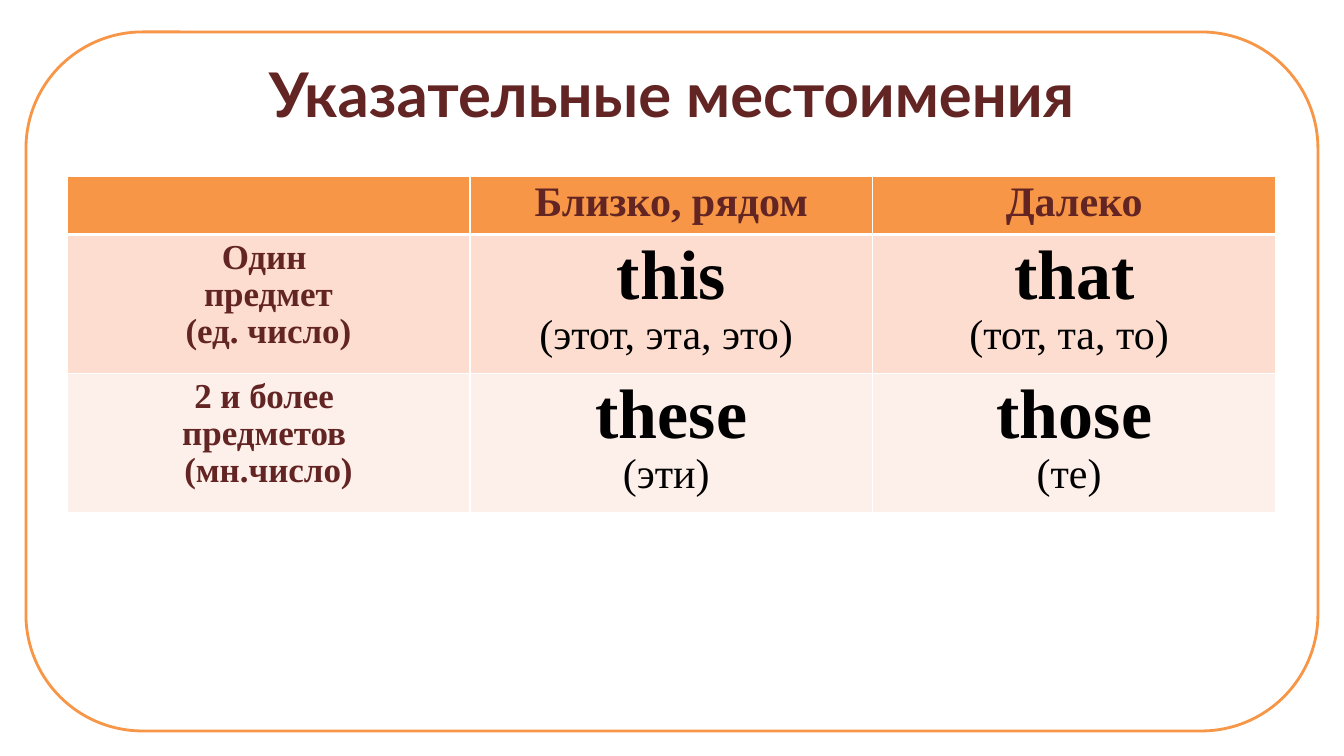
from pptx import Presentation
from pptx.dml.color import RGBColor
from pptx.enum.shapes import MSO_SHAPE
from pptx.enum.text import MSO_ANCHOR, PP_ALIGN
from pptx.oxml import parse_xml
from pptx.oxml.ns import nsdecls
from pptx.util import Emu, Pt

ORANGE, MAROON, BLACK, WHITE = "F79646", "632523", "000000", "FFFFFF"
TITLE = "Указательные местоимения"
SERIF = "Times New Roman"
FORMATS = {
    "title": {"name": "Lato", "size": Pt(44), "bold": True, "color": MAROON},
    "heading": {"name": SERIF, "size": Pt(30), "bold": True, "color": MAROON},
    "number": {"name": SERIF, "size": Pt(25), "bold": True, "color": MAROON},
    "pronoun": {"name": SERIF, "size": Pt(50), "bold": True, "color": BLACK},
    "meaning": {"name": SERIF, "size": Pt(30), "bold": False, "color": BLACK},
}
ROWS = [
    (56, ORANGE, [
        [],
        [("heading", "Близко, рядом")],
        [("heading", "Далеко")],
    ]),
    (134, "FCDDCF", [
        [("number", "Один "), ("number", "предмет"), ("number", "(ед. число)")],
        [("pronoun", "this"), ("meaning", "(этот, эта, это) ")],
        [("pronoun", "that"), ("meaning", "(тот, та, то) ")],
    ]),
    (134, "FDEFE9", [
        [("number", "2 и более "), ("number", "предметов "), ("number", "(мн.число)")],
        [("pronoun", "these"), ("meaning", "(эти) ")],
        [("pronoun", "those"), ("meaning", "(те) ")],
    ]),
]
SLIDE_SIZE = (1344, 756)
FRAME_BOX = (26, 32, 1292, 699)
TITLE_BOX = (67, 30, 1210, 126)
TABLE_LEFT, TABLE_TOP, COLUMN_WIDTH = 67, 176, 403


def px(*lengths):
    return [Emu(round(length * 914400 / 100.8)) for length in lengths]


def rgb(value):
    return RGBColor.from_string(value)


def paint(fill, value):
    fill.solid()
    fill.fore_color.rgb = rgb(value)


def write(frame, lines, spacing):
    for index, (style, text) in enumerate(lines):
        paragraph = frame.add_paragraph() if index else frame.paragraphs[0]
        paragraph.alignment = PP_ALIGN.CENTER
        paragraph.line_spacing = spacing
        run = paragraph.add_run()
        run.text = text
        for key, value in FORMATS[style].items():
            if key == "color":
                run.font.color.rgb = rgb(value)
            else:
                setattr(run.font, key, value)


def add_borders(cell, widths):
    properties = cell._tc.get_or_add_tcPr()
    for position, (side, width) in enumerate(widths.items()):
        properties.insert(position, parse_xml(
            f'<a:{side} {nsdecls("a")} w="{Pt(width)}"><a:solidFill>'
            f'<a:srgbClr val="{WHITE}"/></a:solidFill></a:{side}>'))


def main():
    deck = Presentation()
    deck.slide_width, deck.slide_height = px(*SLIDE_SIZE)
    slide = deck.slides.add_slide(deck.slide_layouts[6])

    border = slide.shapes.add_shape(MSO_SHAPE.ROUNDED_RECTANGLE, *px(*FRAME_BOX))
    border.shadow.inherit = False
    paint(border.fill, WHITE)
    paint(border.line.fill, ORANGE)
    border.line.width = Pt(2)

    title = slide.shapes.add_textbox(*px(*TITLE_BOX)).text_frame
    title.word_wrap = True
    title.vertical_anchor = MSO_ANCHOR.MIDDLE
    write(title, [("title", TITLE)], 1.0)

    column_count = len(ROWS[0][2])
    table_height = sum(height for height, _, _ in ROWS)
    pronouns = slide.shapes.add_table(
        len(ROWS), column_count,
        *px(TABLE_LEFT, TABLE_TOP, COLUMN_WIDTH * column_count, table_height)).table
    for column in pronouns.columns:
        column.width = px(COLUMN_WIDTH)[0]
    for r, (height, color, cells) in enumerate(ROWS):
        pronouns.rows[r].height = px(height)[0]
        widths = {"lnL": 1, "lnR": 1, "lnT": 3 if r == 1 else 1, "lnB": 1 if r else 3}
        for c, lines in enumerate(cells):
            cell = pronouns.cell(r, c)
            paint(cell.fill, color)
            add_borders(cell, widths)
            write(cell.text_frame, lines, 0.96)

    deck.save("out.pptx")


if __name__ == "__main__":
    main()
